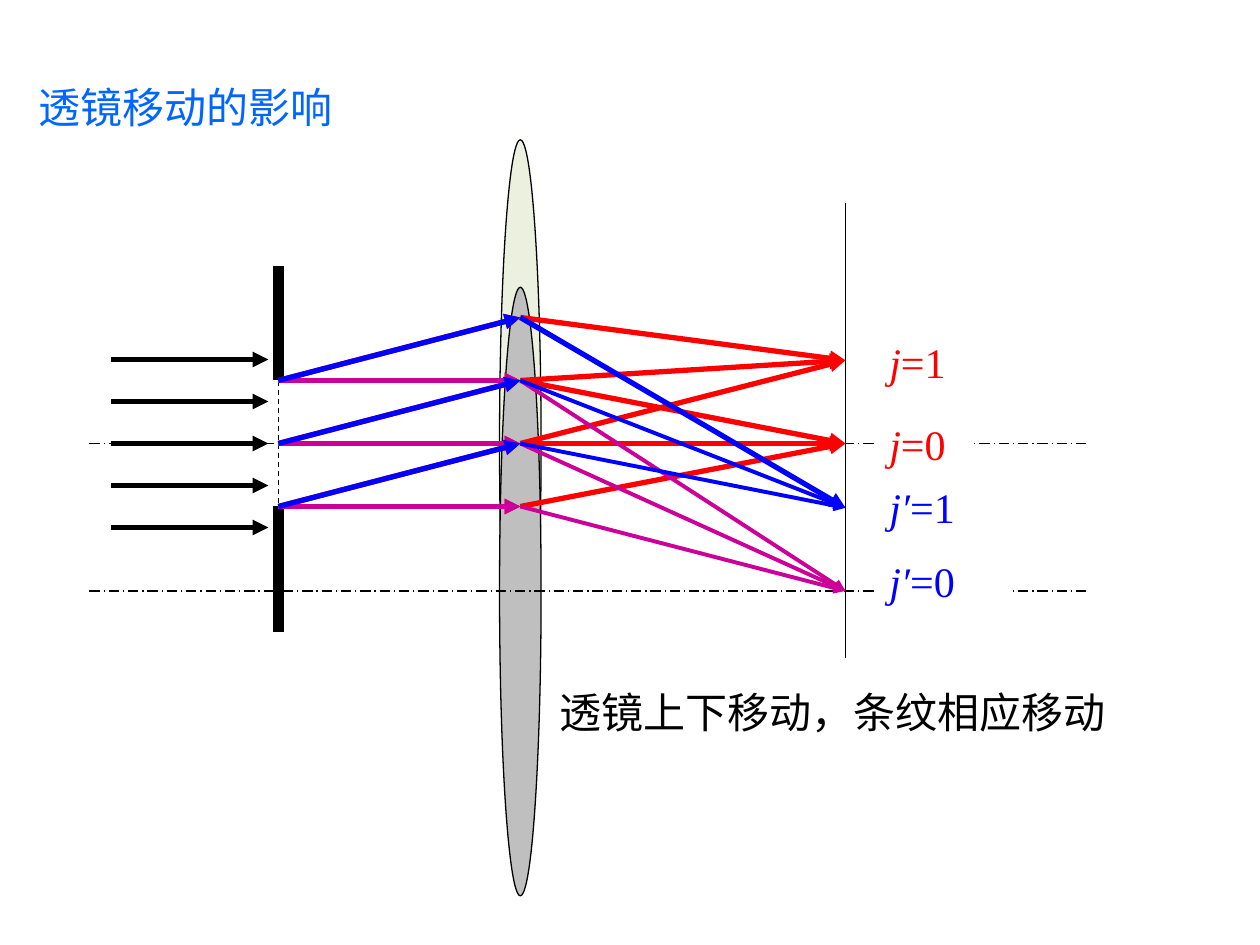
from lxml import etree
from pptx import Presentation
from pptx.dml.color import RGBColor
from pptx.enum.dml import MSO_LINE
from pptx.enum.shapes import MSO_CONNECTOR, MSO_SHAPE
from pptx.enum.text import MSO_ANCHOR, PP_ALIGN
from pptx.oxml.ns import qn
from pptx.util import Inches, Pt

STRAIGHT = MSO_CONNECTOR.STRAIGHT
OVAL, RECT = MSO_SHAPE.OVAL, MSO_SHAPE.RECTANGLE
DASH, LONG_DASH_DOT = MSO_LINE.DASH, MSO_LINE.LONG_DASH_DOT
LEFT, TOP = PP_ALIGN.LEFT, MSO_ANCHOR.TOP
FONT = "Times New Roman"
COLORS = {
    "black": "000000", "white": "FFFFFF", "title": "0066FF",
    "red": "FF0000", "magenta": "CC0099", "blue": "0000FF",
    "lens": "EBF1DE", "moved_lens": "BFBFBF",
}

# Columns and rows of the optical bench, in inches
SLIT_X, LENS_X, SCREEN_X, LABEL_X = 2.21, 4.13, 6.71, 6.96
AXIS_Y, SHIFT = 3.52, 1.17  # the lens moves down by SHIFT
STEP = 0.5  # half the slit; also the rise of a tilted ray up to the lens
SLIT_ROWS = [AXIS_Y - STEP, AXIS_Y, AXIS_Y + STEP]
FIRST_ORDER_Y = 2.86
LENS_W, LENS_H, LENS_TOP = 0.33, 4.83, 1.11


def add_line(x1, y1, x2, y2, color="black", width=0.75, dash=None, arrow=False):
    s = slide.shapes.add_connector(
        STRAIGHT, Inches(x1), Inches(y1), Inches(x2), Inches(y2))
    s.line.color.rgb = RGBColor.from_string(COLORS[color])
    s.line.width = Pt(width)
    if dash:
        s.line.dash_style = dash
    if arrow:
        etree.SubElement(s.line._get_or_add_ln(), qn("a:tailEnd"), type="triangle")
    etree.SubElement(s._element.spPr, qn("a:effectLst"))


def add_text(sp, runs, color, wrap=True):
    """Write (text, italic) runs into the shape, left-aligned from its top."""
    tf = sp.text_frame
    tf.word_wrap = wrap
    tf.vertical_anchor = TOP
    p = tf.paragraphs[0]
    p.alignment = LEFT
    for text, italic in runs:
        r = p.add_run()
        r.text = text
        r.font.name, r.font.size, r.font.italic = FONT, Pt(24), italic
        r.font.color.rgb = RGBColor.from_string(COLORS[color])


prs = Presentation()
prs.slide_width, prs.slide_height = Inches(10), Inches(7.5)
slide = prs.slides.add_slide(prs.slide_layouts[6])

title = slide.shapes.add_textbox(Inches(0.21), Inches(0.6), Inches(2.56), Inches(0.5))
add_text(title, [("透镜移动的影响", False)], "title", wrap=False)

# Lens before and after the move, each with its optical axis
add_line(0.71, AXIS_Y, 8.63, AXIS_Y, dash=LONG_DASH_DOT)
for color, top in [("lens", LENS_TOP), ("moved_lens", LENS_TOP + SHIFT)]:
    sp = slide.shapes.add_shape(
        OVAL, Inches(LENS_X - LENS_W / 2), Inches(top), Inches(LENS_W), Inches(LENS_H))
    sp.shadow.inherit = False
    sp.fill.solid()
    sp.fill.fore_color.rgb = RGBColor.from_string(COLORS[color])
    sp.line.color.rgb = RGBColor.from_string(COLORS["black"])
    sp.line.width = Pt(0.75)
add_line(0.71, AXIS_Y + SHIFT, 8.63, AXIS_Y + SHIFT, dash=LONG_DASH_DOT)

# Slit, incoming light and screen
add_line(SLIT_X, 2.11, SLIT_X, SLIT_ROWS[0], width=6)
add_line(SLIT_X, SLIT_ROWS[-1], SLIT_X, 5.02, width=6)
add_line(SLIT_X, SLIT_ROWS[0], SLIT_X, SLIT_ROWS[-1], dash=DASH)
for i in range(-2, 3):
    y = AXIS_Y + i / 3
    add_line(0.88, y, 2.13, y, width=3, arrow=True)
add_line(SCREEN_X, 1.61, SCREEN_X, 5.22)

# Each bundle: colour, rise up to the lens, focus on the screen, widths after the lens
bundles = [
    ("red", STEP, FIRST_ORDER_Y, (3, 3, 3)),
    ("red", 0, AXIS_Y, (3, 3, 3)),
    ("magenta", 0, AXIS_Y + SHIFT, (2.25, 2.25, 2.25)),
    ("blue", STEP, FIRST_ORDER_Y + SHIFT, (3, 2.25, 2.25)),
]
for color, rise, focus, widths in bundles:
    for y, width in zip(SLIT_ROWS, widths):
        add_line(SLIT_X, y, LENS_X, y - rise, color, 3, arrow=True)
        add_line(LENS_X, y - rise, SCREEN_X, focus, color, width, arrow=True)

# Fringe orders beside the screen
labels = [
    ("j", "=0", "red", 3.27, 0.75),
    ("j", "=1", "red", 2.62, 0.75),
    ("j′", "=0", "blue", 4.36, 1.08),
    ("j′", "=1", "blue", 3.77, 1.17),
]
for symbol, order, color, top, width in labels:
    sp = slide.shapes.add_shape(
        RECT, Inches(LABEL_X), Inches(top), Inches(width), Inches(0.5))
    sp.shadow.inherit = False
    sp.fill.solid()
    sp.fill.fore_color.rgb = RGBColor.from_string(COLORS["white"])
    sp.line.fill.background()
    add_text(sp, [(symbol, True), (order, False)], color)

note = slide.shapes.add_textbox(Inches(4.34), Inches(5.4), Inches(4.67), Inches(0.5))
add_text(note, [("透镜上下移动，条纹相应移动", False)], "black")

prs.save("out.pptx")
